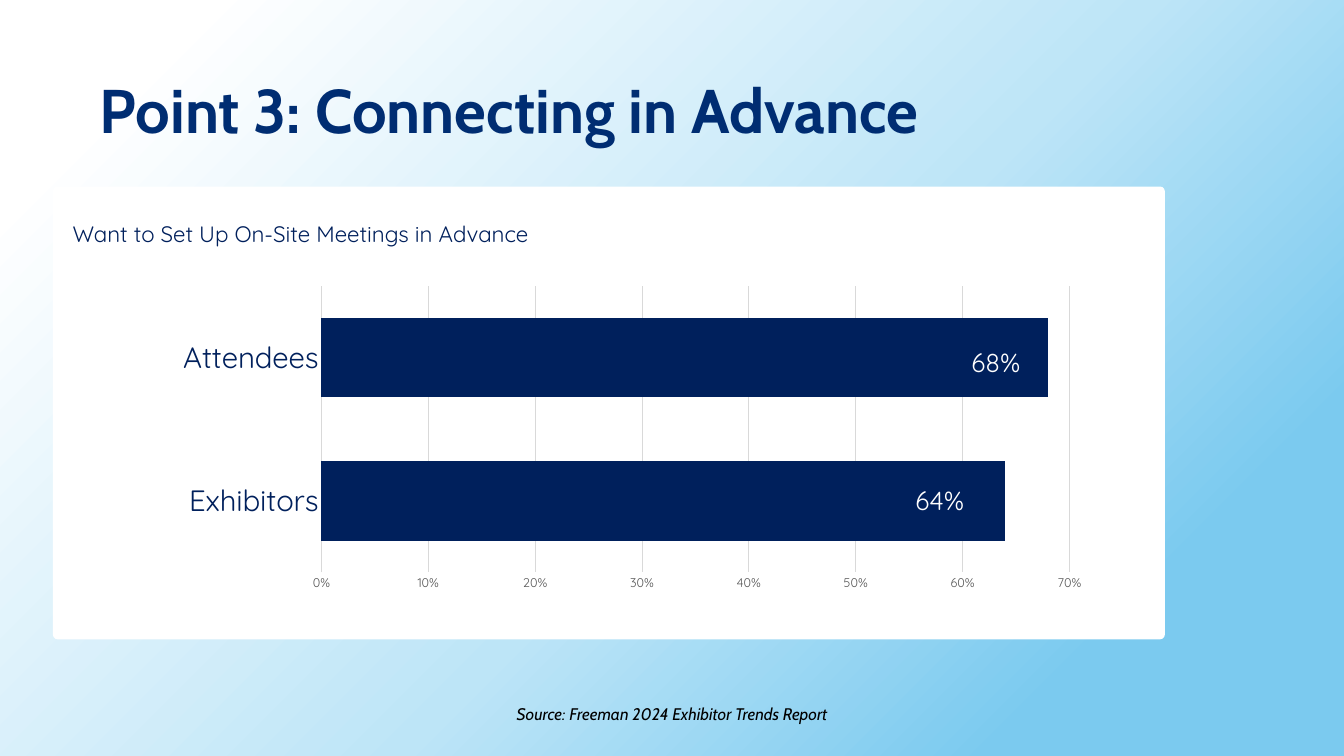
import pptx
import pptx.chart.data
import pptx.dml.color
import pptx.enum.chart
import pptx.enum.shapes
import pptx.enum.text
import pptx.oxml
import pptx.oxml.ns
import pptx.util
from pptx.util import Cm

NAVY = "00205C"
TITLE_BLUE = "002D72"
WHITE = "FFFFFF"
GRID_GREY = "D9D9D9"
TICK_GREY = "595959"
BACKGROUND_STOPS = [(17, "7BCAEF"), (45, "BDE5F7"), (90, WHITE)]


def color(hex_string):
    return pptx.dml.color.RGBColor.from_string(hex_string)


def style_font(font, name, size, hex_string, bold=False, italic=False):
    font.name = name
    font.size = pptx.util.Pt(size)
    font.color.rgb = color(hex_string)
    font.bold = bold
    font.italic = italic


def add_text(slide, box, text, name, size, hex_string, inset=True, wrap=True, **emphasis):
    shape = slide.shapes.add_textbox(*[Cm(length) for length in box])
    frame = shape.text_frame
    frame.word_wrap = wrap
    if not inset:
        frame.margin_left = frame.margin_right = 0
        frame.margin_top = frame.margin_bottom = 0
    frame.text = text
    style_font(frame.paragraphs[0].runs[0].font, name, size, hex_string, **emphasis)
    return frame


def paint_background(slide):
    """Radial gradient that spreads from the bottom right corner."""
    slide.background.fill.gradient()
    gradient = slide.element.xpath(".//p:bgPr/a:gradFill")[0]
    for child in list(gradient):
        gradient.remove(child)
    namespace = pptx.oxml.ns.nsdecls("a")
    stops = "".join(
        f'<a:gs pos="{position * 1000}"><a:srgbClr val="{stop}"/></a:gs>'
        for position, stop in BACKGROUND_STOPS
    )
    gradient.append(pptx.oxml.parse_xml(f"<a:gsLst {namespace}>{stops}</a:gsLst>"))
    gradient.append(pptx.oxml.parse_xml(
        f'<a:path {namespace} path="circle"><a:fillToRect l="100000" t="100000"/></a:path>'
    ))


def add_title(slide, left, top, width, height):
    frame = add_text(slide, (left, top, width, height), "Point 3: Connecting in Advance",
                     "Cabin", 58.7, TITLE_BLUE, bold=True)
    frame.vertical_anchor = pptx.enum.text.MSO_ANCHOR.MIDDLE
    frame.paragraphs[0].line_spacing = 0.9


def set_plot_area(chart, x, y, w, h):
    """Fix the inner plot area as fractions of the chart."""
    plot_area = chart._chartSpace.xpath(".//c:plotArea")[0]
    for layout in plot_area.xpath("./c:layout"):
        plot_area.remove(layout)
    sizes = "".join(f'<c:{key} val="{value}"/>'
                    for key, value in zip("xywh", (x, y, w, h)))
    plot_area.insert(0, pptx.oxml.parse_xml(
        f'<c:layout {pptx.oxml.ns.nsdecls("c")}><c:manualLayout>'
        '<c:layoutTarget val="inner"/><c:xMode val="edge"/><c:yMode val="edge"/>'
        f"{sizes}</c:manualLayout></c:layout>"
    ))


def add_bar_chart(slide, left, top, width, height):
    data = pptx.chart.data.CategoryChartData(number_format="0%")
    data.categories = ["Exhibitors", "Attendees"]
    data.add_series("Series 1", [0.64, 0.68])
    chart = slide.shapes.add_chart(
        pptx.enum.chart.XL_CHART_TYPE.BAR_CLUSTERED,
        Cm(left), Cm(top), Cm(width), Cm(height), data,
    ).chart
    chart.has_legend = False
    chart.has_title = False
    style_font(chart.font, "Calibri", 10, "000000")

    # Bars
    plot = chart.plots[0]
    plot.gap_width = 80
    plot.vary_by_categories = False
    fill = plot.series[0].format.fill
    fill.solid()
    fill.fore_color.rgb = color(NAVY)

    # Axes and gridlines
    category_axis, value_axis = chart.category_axis, chart.value_axis
    for axis in (category_axis, value_axis):
        axis.major_tick_mark = pptx.enum.chart.XL_TICK_MARK.NONE
        axis.minor_tick_mark = pptx.enum.chart.XL_TICK_MARK.NONE
    style_font(category_axis.tick_labels.font, "Quicksand", 28, NAVY)
    style_font(value_axis.tick_labels.font, "Quicksand", 12, TICK_GREY)
    value_axis.minimum_scale = 0
    value_axis.maximum_scale = 0.7
    value_axis.major_unit = 0.1
    value_axis.tick_labels.number_format = "0%"
    value_axis.tick_labels.number_format_is_linked = False
    value_axis.format.line.fill.background()
    value_axis.has_major_gridlines = True
    for line in (category_axis.format.line, value_axis.major_gridlines.format.line):
        line.color.rgb = color(GRID_GREY)
        line.width = pptx.util.Pt(0.75)
    set_plot_area(chart, 0.17, 0.02, 0.8, 0.9)


def add_chart_card(slide, left, top, width, height):
    # White card
    card = slide.shapes.add_shape(
        pptx.enum.shapes.MSO_SHAPE.ROUNDED_RECTANGLE,
        Cm(left), Cm(top), Cm(width), Cm(height),
    )
    card.adjustments[0] = 0.01
    card.shadow.inherit = False
    card.fill.solid()
    card.fill.fore_color.rgb = color(WHITE)
    card.line.fill.background()

    # Heading and chart
    add_text(slide, (left + 0.66, top + 1.12, 25.6, 0.91),
             "Want to Set Up On-Site Meetings in Advance",
             "Quicksand", 21.3, NAVY, inset=False)
    add_bar_chart(slide, left + 3.68, top + 3.13, 31.42, 10.69)

    # Values on the bars
    for text, x, y in [("68%", 30.86, 5.36), ("64%", 28.98, 10.01)]:
        add_text(slide, (left + x, top + y, 2.62, 1.07), text,
                 "Quicksand", 24.9, WHITE, inset=False)


def add_source(slide, left, top, width, height):
    frame = add_text(slide, (left, top, width, height),
                     "Source: Freeman 2024 Exhibitor Trends Report",
                     "Cabin", 16, "000000", wrap=False, italic=True)
    frame.paragraphs[0].alignment = pptx.enum.text.PP_ALIGN.CENTER


def main():
    presentation = pptx.Presentation()
    presentation.slide_width = Cm(45.16)
    presentation.slide_height = Cm(25.4)
    slide = presentation.slides.add_slide(presentation.slide_layouts[6])
    paint_background(slide)
    add_title(slide, 3.1, 1.35, 38.94, 4.9)
    add_chart_card(slide, 1.78, 6.27, 37.36, 15.21)
    add_source(slide, 16.69, 23.52, 11.79, 0.94)
    presentation.save("out.pptx")


if __name__ == "__main__":
    main()
